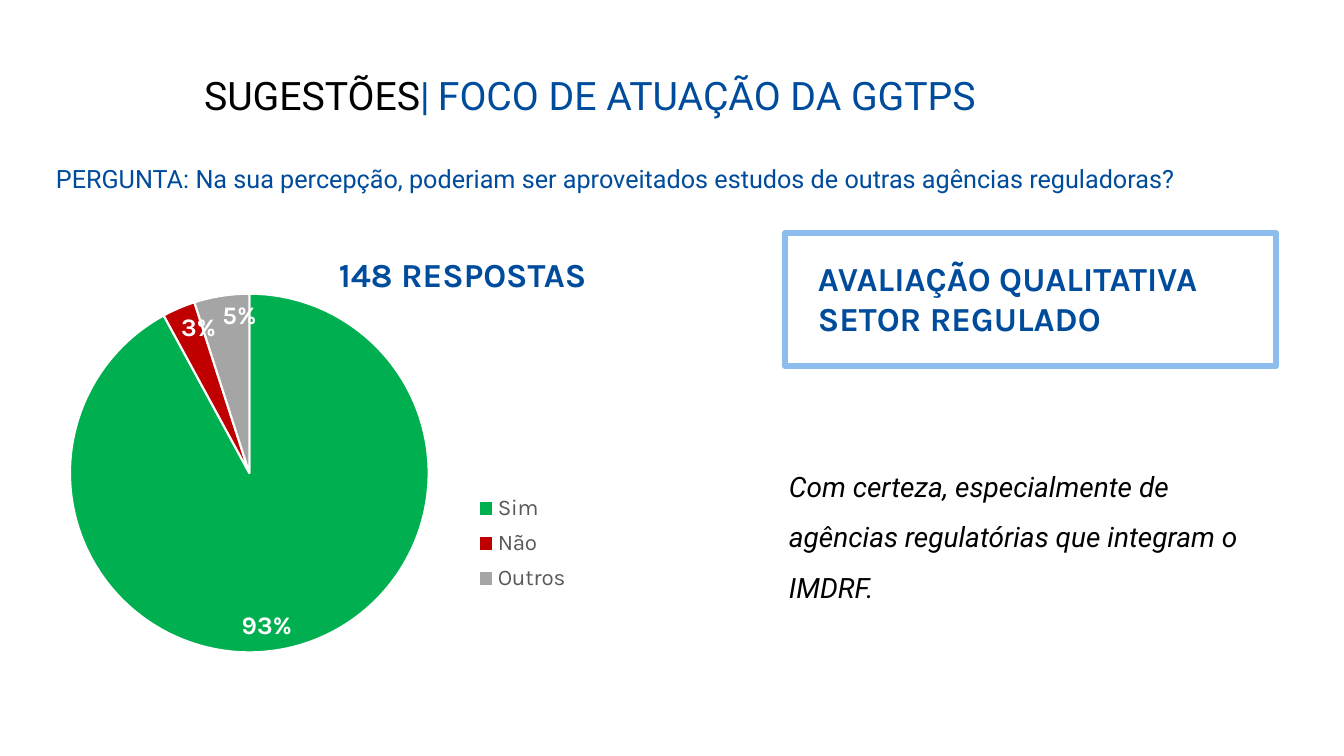
from lxml.etree import SubElement
from pptx import Presentation
from pptx.chart.data import CategoryChartData
from pptx.dml.color import RGBColor
from pptx.enum.chart import XL_CHART_TYPE, XL_LABEL_POSITION, XL_LEGEND_POSITION
from pptx.enum.shapes import MSO_SHAPE
from pptx.enum.text import MSO_ANCHOR, MSO_AUTO_SIZE, PP_ALIGN
from pptx.oxml.ns import qn
from pptx.util import Emu, Pt

PX = 914400 / 100.8
COLORS = {
    "black": "000000",
    "white": "FFFFFF",
    "blue": "004C9C",
    "frame": "8CBDEC",
    "legend": "595959",
    "Sim": "00B050",
    "Não": "C00000",
    "Outros": "A5A5A5",
}
ANSWERS = {"Sim": 0.93, "Não": 0.03, "Outros": 0.05}


def px(*lengths):
    return [Emu(round(length * PX)) for length in lengths]


def color(name):
    return RGBColor.from_string(COLORS[name])


def format_font(font, color_name, size, **values):
    values["size"] = Pt(size)
    for name, value in values.items():
        setattr(font, name, value)
    font.color.rgb = color(color_name)


def add_span(para, text, color_name, size, **values):
    span = para.add_run()
    span.text = text
    format_font(span.font, color_name, size, **values)


def add_text(page, area, text, color_name, size, anchor=MSO_ANCHOR.TOP,
             line_spacing=1.0, **values):
    frame = page.shapes.add_textbox(*px(*area)).text_frame
    frame.word_wrap = True
    frame.vertical_anchor = anchor
    para = frame.paragraphs[0]
    para.line_spacing = line_spacing
    add_span(para, text, color_name, size, **values)


def fill_title(page):
    title = page.shapes.title
    title.left, title.top, title.width, title.height = px(194, 56, 992, 84)
    frame = title.text_frame
    frame.auto_size = MSO_AUTO_SIZE.NONE
    frame.vertical_anchor = MSO_ANCHOR.MIDDLE
    para = frame.paragraphs[0]
    para.alignment = PP_ALIGN.LEFT
    para.line_spacing = 0.9
    for text, color_name, size in (
        ("SUGESTÕES", "black", 28),
        ("|", "blue", 28),
        (" ", "black", 24),
        ("FOCO DE ATUAÇÃO DA GGTPS", "blue", 28),
    ):
        add_span(para, text, color_name, size, name="Roboto")


def add_frame(page, area):
    box = page.shapes.add_shape(MSO_SHAPE.RECTANGLE, *px(*area))
    box.shadow.inherit = False
    box.fill.background()
    box.line.color.rgb = color("frame")
    box.line.width = Pt(4.5)


def set_layout(element, index, **values):
    """Give a chart part a manual layout, in fractions of the chart."""
    for old in element.findall(qn("c:layout")):
        element.remove(old)
    layout = SubElement(element, qn("c:layout"))
    element.insert(index, layout)
    manual = SubElement(layout, qn("c:manualLayout"))
    for name, value in values.items():
        SubElement(manual, qn(f"c:{name}")).set("val", str(value))


def add_answer_pie(page, area):
    data = CategoryChartData(number_format="0%")
    data.categories = list(ANSWERS)
    data.add_series("Respostas", list(ANSWERS.values()))
    chart = page.shapes.add_chart(XL_CHART_TYPE.PIE, *px(*area), data).chart
    chart.has_title = False
    format_font(chart.font, "black", 12, name="Karla")

    plot = chart.plots[0]
    plot.vary_by_categories = True
    for index, answer in enumerate(ANSWERS):
        slice_format = plot.series[0].points[index].format
        slice_format.fill.solid()
        slice_format.fill.fore_color.rgb = color(answer)
        slice_format.line.color.rgb = color("white")
        slice_format.line.width = Pt(1.5)

    plot.has_data_labels = True
    labels = plot.data_labels
    for name, value in {
        "show_value": True,
        "show_percentage": False,
        "number_format": "0%",
        "number_format_is_linked": False,
        "position": XL_LABEL_POSITION.INSIDE_END,
    }.items():
        setattr(labels, name, value)
    format_font(labels.font, "white", 18, name="Karla", bold=True)

    chart.has_legend = True
    legend = chart.legend
    legend.position = XL_LEGEND_POSITION.BOTTOM
    legend.include_in_layout = False
    format_font(legend.font, "legend", 16, name="Karla")

    plot_area = chart.element.find(f".//{qn('c:plotArea')}")
    set_layout(plot_area, 0, layoutTarget="inner", xMode="edge", yMode="edge",
               x=0.04, y=0.14, w=0.62, h=0.84)
    legend_element = chart.element.find(f".//{qn('c:legend')}")
    set_layout(legend_element, 1, xMode="edge", yMode="edge",
               x=0.73, y=0.59, w=0.18, h=0.27)


def main():
    deck = Presentation()
    deck.slide_width, deck.slide_height = px(1344, 756)
    page = deck.slides.add_slide(deck.slide_layouts[5])

    fill_title(page)
    add_text(page, (46, 158, 1213, 40),
             "PERGUNTA: Na sua percepção, poderiam ser aproveitados estudos "
             "de outras agências reguladoras?", "blue", 18, name="Roboto")
    add_answer_pie(page, (46, 234, 581, 427))
    add_frame(page, (785, 233, 491, 133))
    add_text(page, (808, 253, 456, 92), "AVALIAÇÃO QUALITATIVA SETOR REGULADO",
             "blue", 24, name="Karla", bold=True)
    add_text(page, (779, 475, 513, 106),
             "Com certeza, especialmente de agências regulatórias que "
             "integram o IMDRF.", "black", 20, MSO_ANCHOR.MIDDLE, 1.5,
             name="Roboto", italic=True)
    add_text(page, (329, 249, 456, 50), "148 RESPOSTAS", "blue", 24,
             name="Karla", bold=True)
    deck.save("out.pptx")


if __name__ == "__main__":
    main()
